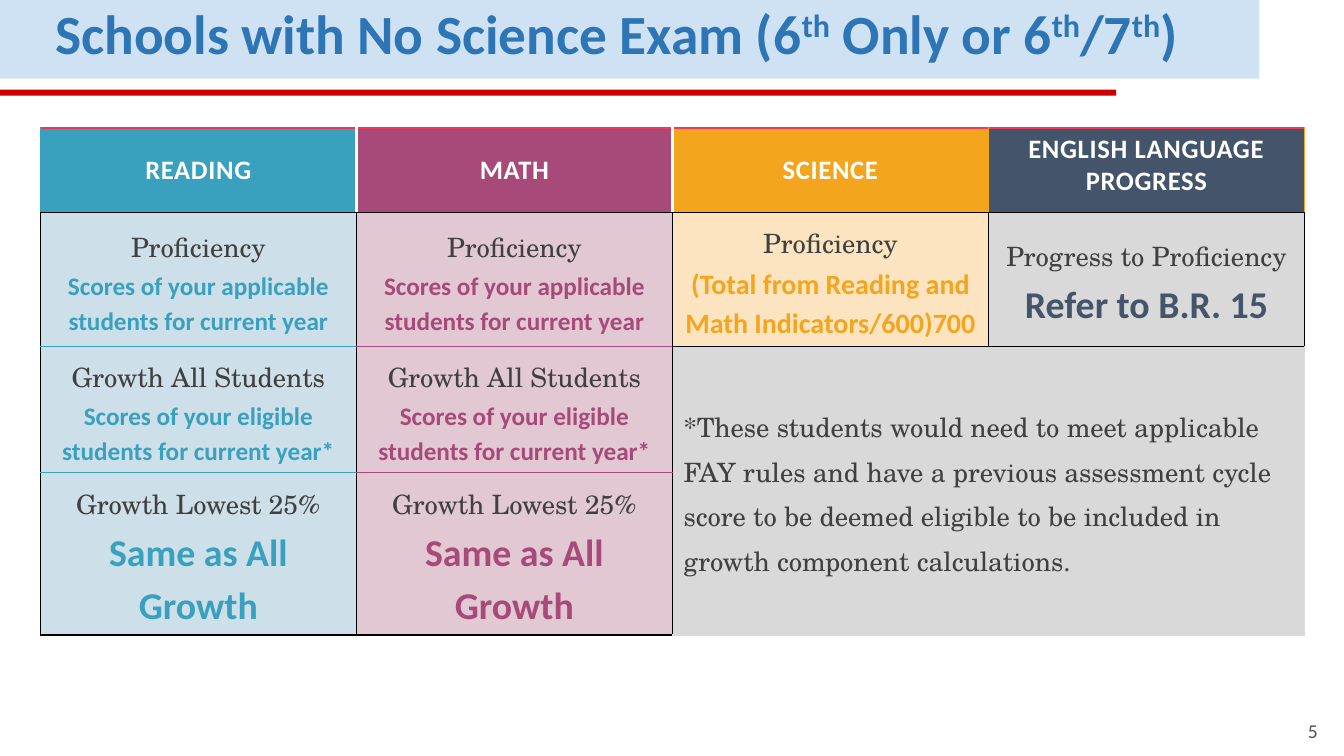
"""Build the slide on schools with no science exam: a title band and an indicator table."""
from dataclasses import dataclass

from lxml import etree
from pptx import Presentation
from pptx.dml.color import RGBColor
from pptx.enum.shapes import MSO_SHAPE
from pptx.enum.text import MSO_ANCHOR, PP_ALIGN
from pptx.oxml.ns import qn
from pptx.util import Inches, Pt

RECTANGLE = MSO_SHAPE.RECTANGLE
TOP, MIDDLE, BOTTOM = MSO_ANCHOR.TOP, MSO_ANCHOR.MIDDLE, MSO_ANCHOR.BOTTOM
LEFT, CENTER, RIGHT = PP_ALIGN.LEFT, PP_ALIGN.CENTER, PP_ALIGN.RIGHT


@dataclass(frozen=True)
class Theme:
    sans: str = "Calibri"
    serif: str = "TeX Gyre Schola"
    band: str = "CFE2F3"
    rule: str = "CC0000"
    title: str = "2E75B6"
    page: str = "525252"
    body: str = "404040"
    white: str = "FFFFFF"
    black: str = "000000"
    table_top: str = "EE3A5A"
    teal: str = "39A0BE"
    plum: str = "A74A7A"
    orange: str = "F3A51D"
    navy: str = "44546A"
    pale_teal: str = "CDDFE9"
    pale_plum: str = "E1C8D2"
    pale_orange: str = "FCE4C1"
    grey: str = "D9D9D9"
    title_size: float = 39.5
    label_size: float = 19
    score_size: float = 18
    total_size: float = 20
    large_size: float = 27
    page_size: float = 14


THEME = Theme()
SLIDE_WIDTH, SLIDE_HEIGHT = 13.33, 7.5
TITLE_PARTS = ["Schools with No Science Exam (6", "th", " Only or 6", "th", "/7", "th", ")"]
PAGE_NUMBER = "5"
COLUMNS = [
    ("READING", THEME.teal, THEME.pale_teal),
    ("MATH", THEME.plum, THEME.pale_plum),
    ("SCIENCE", THEME.orange, THEME.pale_orange),
    ("ENGLISH LANGUAGE PROGRESS", THEME.navy, THEME.grey),
]
SHARED_INDICATORS = [
    ("Proficiency", "Scores of your applicable students for current year", THEME.score_size),
    ("Growth All Students", "Scores of your eligible students for current year*", THEME.score_size),
    ("Growth Lowest 25%", "Same as All Growth", THEME.large_size),
]
SCIENCE_INDICATOR = ("Proficiency", "(Total from Reading and Math Indicators/600)700", THEME.total_size)
ENGLISH_INDICATOR = ("Progress to Proficiency", "Refer to B.R. 15", THEME.large_size)
NOTE = (
    "*These students would need to meet applicable FAY rules and have a previous "
    "assessment cycle score to be deemed eligible to be included in growth component calculations."
)
TABLE_LEFT, TABLE_TOP, TABLE_WIDTH = 0.4, 1.27, 12.54
ROW_HEIGHTS = [0.84, 1.33, 1.25, 1.61]
HEADER_RULES = [THEME.teal, THEME.white, THEME.white, THEME.orange, THEME.orange]


def color(value):
    return RGBColor.from_string(value)


def write(paragraph, text, *, size, fill, font=THEME.sans, bold=False, **attributes):
    run = paragraph.add_run()
    run.text = text
    run.font.name, run.font.size, run.font.bold = font, Pt(size), bold
    run.font.color.rgb = color(fill)
    for name, value in attributes.items():
        run.font._element.set(name, str(value))


def add_bar(slide, top, width, height, fill):
    bar = slide.shapes.add_shape(RECTANGLE, 0, Inches(top), Inches(width), Inches(height))
    bar.shadow.inherit = False
    bar.fill.solid()
    bar.fill.fore_color.rgb = color(fill)
    bar.line.fill.background()


def add_text_box(slide, left, top, width, height, anchor, margin):
    box = slide.shapes.add_textbox(Inches(left), Inches(top), Inches(width), Inches(height))
    frame = box.text_frame
    frame.word_wrap, frame.vertical_anchor = True, anchor
    frame.margin_left = frame.margin_right = Inches(0.1)
    frame.margin_top = frame.margin_bottom = Inches(margin)
    return frame.paragraphs[0]


def style_cell(cell, fill, left, right, top, bottom, anchor=MIDDLE):
    cell.vertical_anchor = anchor
    cell.margin_left = cell.margin_right = Inches(0.11)
    cell.margin_top = cell.margin_bottom = Inches(0.05)
    properties = cell._tc.get_or_add_tcPr()
    for tag, edge in (("a:lnL", left), ("a:lnR", right), ("a:lnT", top), ("a:lnB", bottom)):
        width = Pt(2.25) if edge == THEME.white else Pt(1)
        line = etree.SubElement(properties, qn(tag), w=str(int(width)))
        solid = etree.SubElement(line, qn("a:solidFill"))
        etree.SubElement(solid, qn("a:srgbClr"), val=edge)
    cell.fill.solid()
    cell.fill.fore_color.rgb = color(fill)


def format_body(paragraph, align=CENTER, after=10):
    paragraph.alignment, paragraph.line_spacing = align, 1.15
    paragraph.space_after = Pt(after)


def write_indicator(cell, indicator, accent, split=False):
    label, value, size = indicator
    paragraph = cell.text_frame.paragraphs[0]
    format_body(paragraph, after=0 if split else 10)
    write(paragraph, label, size=THEME.label_size, fill=THEME.body, font=THEME.serif)
    if split:
        paragraph = cell.text_frame.add_paragraph()
        format_body(paragraph, after=0)
    else:
        paragraph.add_line_break()
    write(paragraph, value, size=size, fill=accent, bold=True)


def add_indicator_table(slide):
    frame = slide.shapes.add_table(
        len(ROW_HEIGHTS), len(COLUMNS), Inches(TABLE_LEFT), Inches(TABLE_TOP),
        Inches(TABLE_WIDTH), Inches(sum(ROW_HEIGHTS)))
    table = frame.table
    table.first_row = table.horz_banding = False
    for row, height in zip(table.rows, ROW_HEIGHTS):
        row.height = Inches(height)
    black = THEME.black
    for index, (name, accent, pale) in enumerate(COLUMNS):
        table.columns[index].width = Inches(TABLE_WIDTH / len(COLUMNS))
        header = table.cell(0, index)
        style_cell(header, accent, HEADER_RULES[index], HEADER_RULES[index + 1],
                   THEME.table_top, black, TOP if index == 3 else MIDDLE)
        paragraph = header.text_frame.paragraphs[0]
        paragraph.alignment = CENTER
        write(paragraph, name, size=THEME.label_size, fill=THEME.white, bold=True, spc=50)
        if index < 2:
            rules = [black, accent, accent, black]
            for row, indicator in enumerate(SHARED_INDICATORS, 1):
                cell = table.cell(row, index)
                style_cell(cell, pale, black, black, rules[row - 1], rules[row])
                write_indicator(cell, indicator, accent)
        else:
            cell = table.cell(1, index)
            style_cell(cell, pale, black, black, black, black)
            english = index == 3
            write_indicator(cell, ENGLISH_INDICATOR if english else SCIENCE_INDICATOR, accent, english)
            for row in (2, 3):
                style_cell(table.cell(row, index), THEME.grey,
                           THEME.grey if english else black, THEME.grey,
                           black if row == 2 else THEME.grey, THEME.grey)
    note = table.cell(2, 2)
    note.merge(table.cell(3, 3))
    paragraph = note.text_frame.paragraphs[0]
    format_body(paragraph, LEFT)
    write(paragraph, NOTE, size=THEME.label_size, fill=THEME.body, font=THEME.serif)


def main():
    presentation = Presentation()
    presentation.slide_width, presentation.slide_height = Inches(SLIDE_WIDTH), Inches(SLIDE_HEIGHT)
    slide = presentation.slides.add_slide(presentation.slide_layouts[6])
    add_bar(slide, 0, 12.49, 0.78, THEME.band)
    add_bar(slide, 0.89, 11.07, 0.06, THEME.rule)
    title = add_text_box(slide, 0.45, 0.05, 12.04, 0.66, MIDDLE, 0.05)
    title.line_spacing = 0.8
    for part in TITLE_PARTS:
        raised = {"baseline": 30000} if part == "th" else {}
        write(title, part, size=THEME.title_size, fill=THEME.title, bold=True, **raised)
    page = add_text_box(slide, 12.37, 7.13, 0.8, 0.34, BOTTOM, 0.1)
    page.alignment = RIGHT
    write(page, PAGE_NUMBER, size=THEME.page_size, fill=THEME.page)
    add_indicator_table(slide)
    presentation.save("out.pptx")


if __name__ == "__main__":
    main()
